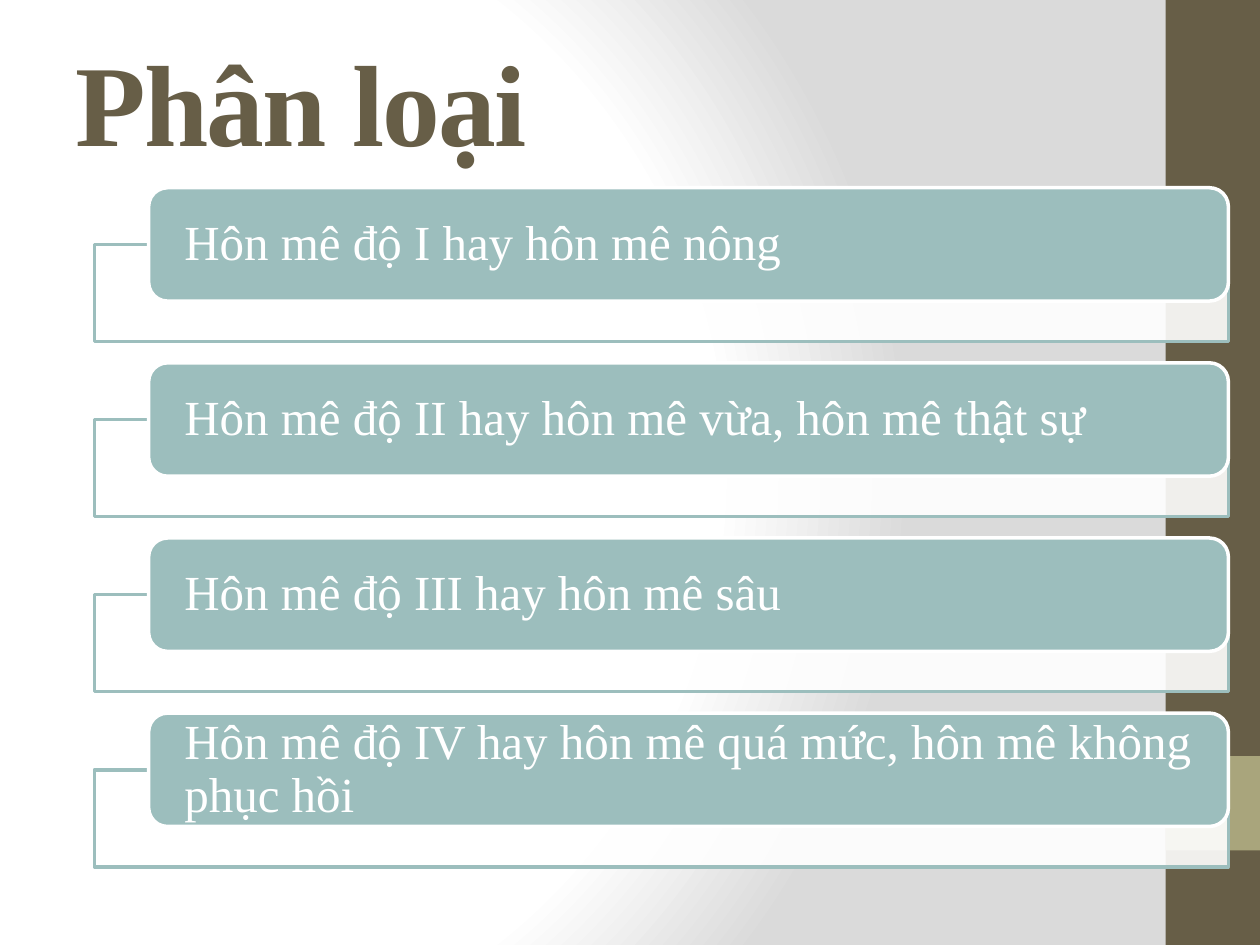
import pptx
import pptx.dml.color
import pptx.enum.shapes
import pptx.enum.text
import pptx.oxml
import pptx.oxml.ns
import pptx.util
import lxml.etree

Inches = pptx.util.Inches
Pt = pptx.util.Pt
Shape = pptx.enum.shapes.MSO_SHAPE
Align = pptx.enum.text.PP_ALIGN
Anchor = pptx.enum.text.MSO_ANCHOR
qn = pptx.oxml.ns.qn

COLORS = {"brown": "675E47", "olive": "A9A57C", "teal": "9CBEBD",
          "white": "FFFFFF", "gray": "DADADA"}
TITLE = {"name": "Times New Roman", "size": Pt(66), "bold": True}
BODY = {"name": "Times New Roman", "size": Pt(28), "bold": False}
FRAME = {"word_wrap": True, "vertical_anchor": Anchor.MIDDLE}
INSETS = {"margin_left": Inches(0.24), "margin_right": Inches(0.24),
          "margin_top": 0, "margin_bottom": 0}
LEVELS = [
    "Hôn mê độ I hay hôn mê nông",
    "Hôn mê độ II hay hôn mê vừa, hôn mê thật sự",
    "Hôn mê độ III hay hôn mê sâu",
    "Hôn mê độ IV hay hôn mê quá mức, hôn mê không phục hồi",
]


def rgb(key):
    """Return the named colour."""
    return pptx.dml.color.RGBColor.from_string(COLORS[key])


def apply(thing, values):
    """Set each attribute listed in a dict of format values."""
    for key, value in values.items():
        setattr(thing, key, value)


def add_box(slide, kind, box, fill, line=None):
    """Add a flat shape in a box of inches."""
    shape = slide.shapes.add_shape(kind, *map(Inches, box))
    shape.shadow.inherit = False
    shape.fill.solid()
    shape.fill.fore_color.rgb = rgb(fill)
    if line:
        shape.line.color.rgb = rgb(line)
        shape.line.width = Pt(2)
    else:
        shape.line.fill.background()
    return shape


def write(frame, text, font, color):
    """Write one left-aligned run and return it."""
    apply(frame, FRAME)
    para = frame.paragraphs[0]
    para.alignment = Align.LEFT
    run = para.add_run()
    run.text = text
    apply(run.font, font)
    run.font.color.rgb = rgb(color)
    return run


def add_back(slide):
    """Fill the background with a round gradient."""
    slide.background.fill.gradient()
    old = slide.element.find(".//" + qn("a:gradFill"))
    stops = "".join(
        f'<a:gs pos="{pos}000"><a:srgbClr val="{COLORS[key]}"/></a:gs>'
        for pos, key in ((0, "white"), (75, "white"), (100, "gray")))
    new = pptx.oxml.parse_xml(
        f'<a:gradFill {pptx.oxml.ns.nsdecls("a")} rotWithShape="1">'
        f'<a:gsLst>{stops}</a:gsLst><a:path path="circle">'
        '<a:fillToRect l="20000" t="50000" r="100000" b="50000"/>'
        '</a:path></a:gradFill>')
    old.getparent().replace(old, new)


def add_side(slide, left, top, width, height):
    """Add the side band and its square accent."""
    add_box(slide, Shape.RECTANGLE, (left, top, width, height), "brown")
    add_box(slide, Shape.RECTANGLE, (left, top + 6, width, width), "olive")


def add_title(slide, left, top, width, height):
    """Place and format the title."""
    title = slide.shapes.title
    apply(title, {"left": Inches(left), "top": Inches(top),
                  "width": Inches(width), "height": Inches(height)})
    run = write(title.text_frame, "Phân loại", TITLE, "brown")
    run.font._element.set("spc", "-100")


def add_level(slide, text, left, top, width):
    """Add a pale panel with a rounded label over it."""
    panel = add_box(slide, Shape.RECTANGLE, (left, top + 0.45, width, 0.77),
                    "white", "teal")
    tint = panel.fill._xPr.find(".//" + qn("a:srgbClr"))
    lxml.etree.SubElement(tint, qn("a:alpha"), val="90000")
    label = add_box(slide, Shape.ROUNDED_RECTANGLE,
                    (left + 0.43, top, width - 0.43, 0.9), "teal", "white")
    frame = label.text_frame
    apply(frame, INSETS)
    write(frame, text, BODY, "white")
    frame.paragraphs[0].line_spacing = 0.9


def add_list(slide, left, top, width, step):
    """Stack the levels at an equal step."""
    for row, text in enumerate(LEVELS):
        add_level(slide, text, left, top + row * step, width)


def main():
    """Build and save the slide."""
    deck = pptx.Presentation()
    deck.slide_width, deck.slide_height = Inches(10), Inches(7.5)
    slide = deck.slides.add_slide(deck.slide_layouts[5])
    add_back(slide)
    add_side(slide, 9.25, 0, 0.75, 7.5)
    add_title(slide, 0.5, 0.17, 9, 1.25)
    add_list(slide, 0.75, 1.49, 9, 1.39)
    deck.save("out.pptx")


if __name__ == "__main__":
    main()
